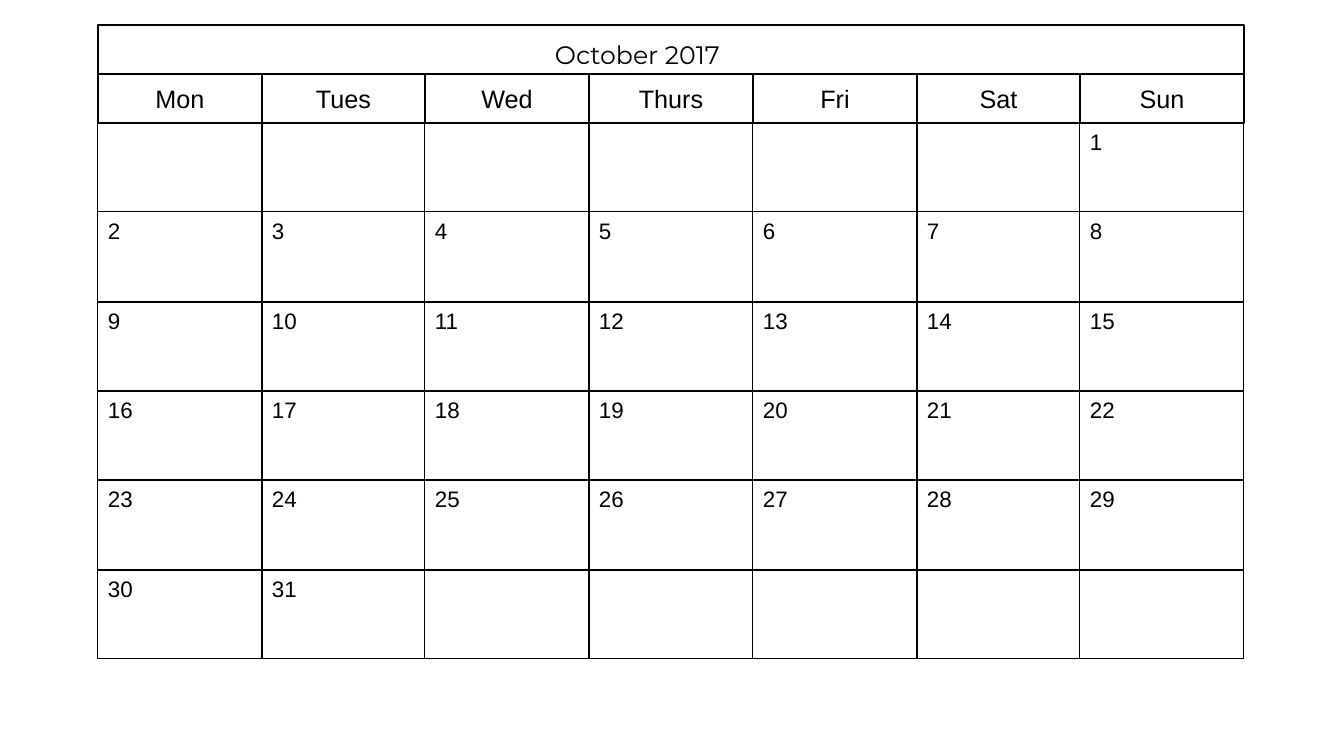
from dataclasses import dataclass

import pptx
import pptx.dml.color
import pptx.enum.shapes
import pptx.enum.text
import pptx.util

EMU_PER_PX = 914400 / 100.8
BLACK = "000000"
WHITE = "FFFFFF"
ANCHOR = pptx.enum.text.MSO_ANCHOR
ALIGN = pptx.enum.text.PP_ALIGN

LEFT, WIDTH = 98, 1146
TITLE_TOP, HEADER_TOP, DAYS_TOP, DAYS_BOTTOM = 25, 74, 123, 659
WEEKS = 6
FIRST_DAY_COLUMN = 6
DAYS_IN_MONTH = 31
WEEKDAYS = ["Mon", "Tues", "Wed", "Thurs", "Fri", "Sat", "Sun"]


@dataclass
class Cell:
    left: int
    top: int
    right: int
    bottom: int
    line: float | None = None


def px(length: float) -> pptx.util.Emu:
    return pptx.util.Emu(round(length * EMU_PER_PX))


def color(value: str) -> pptx.dml.color.RGBColor:
    return pptx.dml.color.RGBColor.from_string(value)


def edges(start: int, end: int, count: int) -> list[int]:
    return [round(start + (end - start) * index / count) for index in range(count + 1)]


def draw_cell(page, cell: Cell):
    box = page.shapes.add_shape(
        pptx.enum.shapes.MSO_SHAPE.RECTANGLE,
        px(cell.left),
        px(cell.top),
        px(cell.right - cell.left),
        px(cell.bottom - cell.top),
    )
    box.shadow.inherit = False
    box.fill.solid()
    box.fill.fore_color.rgb = color(WHITE)
    if cell.line is None:
        box.line.fill.background()
    else:
        box.line.color.rgb = color(BLACK)
        box.line.width = pptx.util.Pt(cell.line)
    return box


def write(
    box,
    text: str,
    *,
    size: int,
    font: str = "Arial",
    align=ALIGN.LEFT,
    anchor=ANCHOR.TOP,
    margin: int = 5,
    hanging: int = 0,
    wrap: bool = True,
) -> None:
    frame = box.text_frame
    frame.word_wrap = wrap
    frame.vertical_anchor = anchor
    frame.margin_left = frame.margin_right = px(10)
    frame.margin_top = frame.margin_bottom = px(margin)
    para = frame.paragraphs[0]
    para.alignment = align
    if hanging:
        properties = para._p.get_or_add_pPr()
        properties.set("marL", str(px(hanging)))
        properties.set("indent", str(-px(hanging)))
    span = para.add_run()
    span.text = text
    span.font.size = pptx.util.Pt(size)
    span.font.name = font
    span.font.color.rgb = color(BLACK)


def draw_title(page) -> None:
    draw_cell(page, Cell(LEFT, TITLE_TOP, LEFT + WIDTH, HEADER_TOP, line=1))
    title = draw_cell(page, Cell(545, 34, 754, 74))
    write(title, "October 2017", size=18, font="Montserrat", wrap=False)
    title.text_frame.auto_size = pptx.enum.text.MSO_AUTO_SIZE.SHAPE_TO_FIT_TEXT


def draw_weekdays(page, columns: list[int]) -> None:
    for column, name in reversed(list(enumerate(WEEKDAYS))):
        cell = Cell(columns[column], HEADER_TOP, columns[column + 1], DAYS_TOP, line=1)
        write(
            draw_cell(page, cell),
            name,
            size=18,
            align=ALIGN.CENTER,
            anchor=ANCHOR.MIDDLE,
            margin=2,
            hanging=38,
        )


def draw_days(page, columns: list[int]) -> None:
    rows = edges(DAYS_TOP, DAYS_BOTTOM, WEEKS)
    for position in reversed(range(WEEKS * len(WEEKDAYS))):
        week, column = divmod(position, len(WEEKDAYS))
        cell = Cell(columns[column], rows[week], columns[column + 1], rows[week + 1], line=0.75)
        box = draw_cell(page, cell)
        day = position - FIRST_DAY_COLUMN + 1
        if 1 <= day <= DAYS_IN_MONTH:
            write(box, str(day), size=16)


def main() -> None:
    deck = pptx.Presentation()
    deck.slide_width = px(1344)
    deck.slide_height = px(756)
    page = deck.slides.add_slide(deck.slide_layouts[6])
    columns = edges(LEFT, LEFT + WIDTH, len(WEEKDAYS))
    draw_title(page)
    draw_weekdays(page, columns)
    draw_days(page, columns)
    deck.save("out.pptx")


if __name__ == "__main__":
    main()
